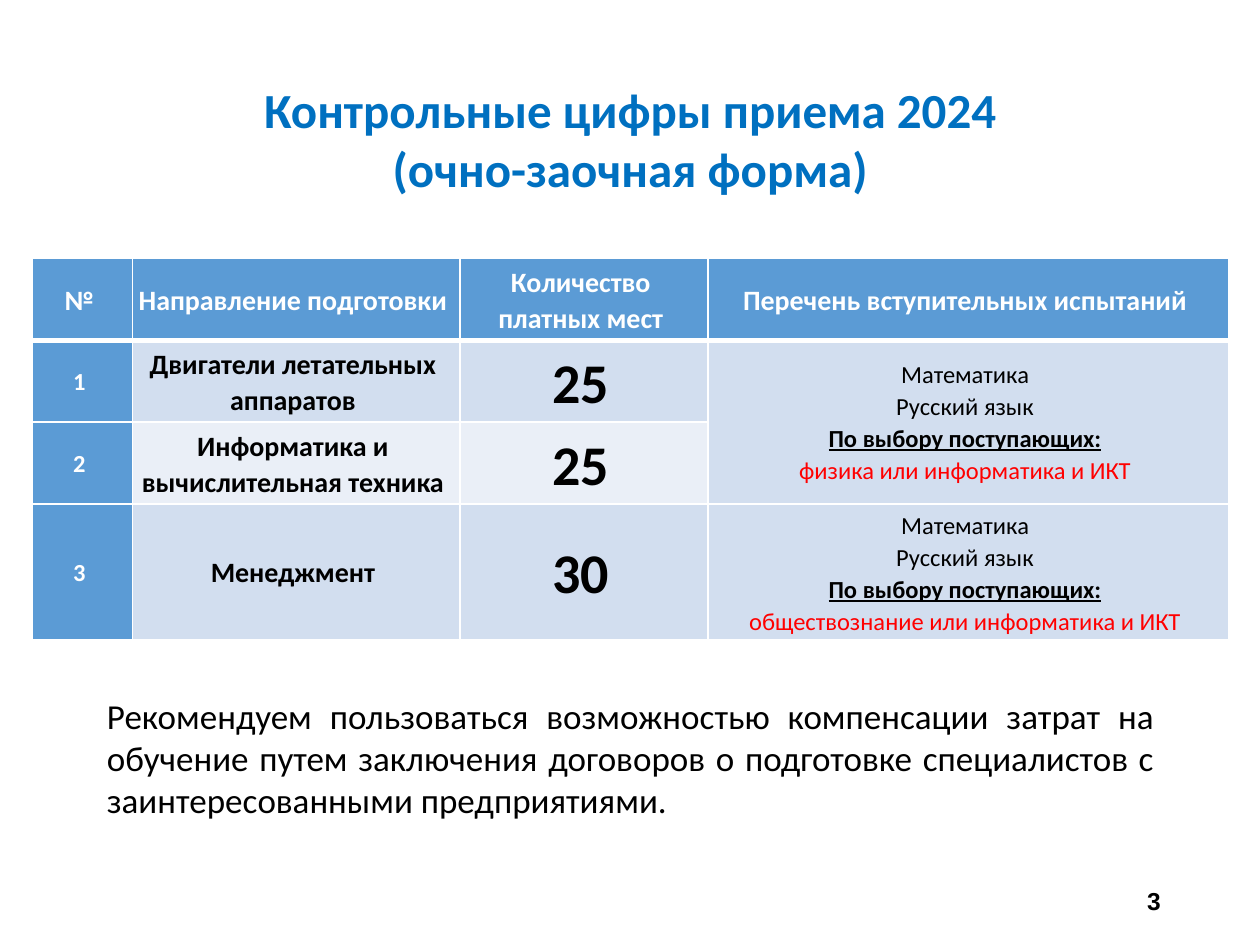
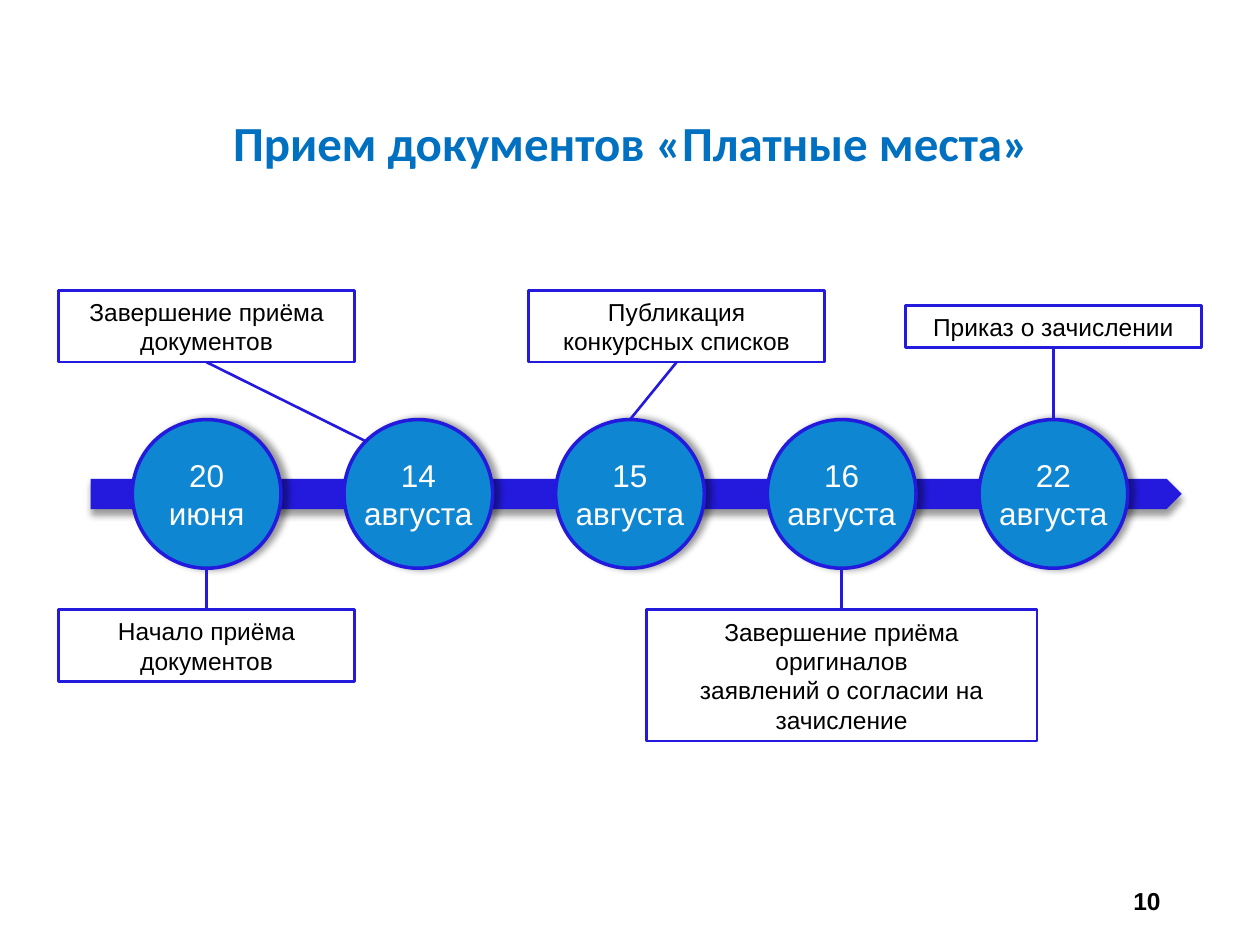
from typing import NamedTuple

from lxml.etree import SubElement
from pptx import Presentation
from pptx.dml.color import RGBColor
from pptx.enum.shapes import MSO_CONNECTOR, MSO_SHAPE
from pptx.enum.text import MSO_ANCHOR, PP_ALIGN
from pptx.oxml.ns import qn
from pptx.util import Inches, Pt

# ---- Content ----
QUOTA_TITLE = ["Контрольные цифры приема 2024", "(очно-заочная форма)"]
QUOTA_HEADER = ["№", "Направление подготовки", "Количество платных мест",
                "Перечень вступительных испытаний"]
PROGRAMMES = [
    ("Двигатели летательных аппаратов", "25"),
    ("Информатика и вычислительная техника", "25"),
    ("Менеджмент", "30"),
]
COMMON_EXAMS = ["Математика", "Русский язык", "По выбору поступающих:"]
# (first row, last row, subjects to choose from)
EXAM_CHOICES = [
    (1, 2, "физика или информатика и ИКТ"),
    (3, 3, "обществознание или информатика и ИКТ"),
]
ADVICE = ("Рекомендуем пользоваться возможностью компенсации затрат на обучение "
          "путем заключения договоров о подготовке специалистов "
          "с заинтересованными предприятиями.")

TIMELINE_TITLE = ["Прием документов «Платные места»"]
DATES = [("20", "июня"), ("14", "августа"), ("15", "августа"),
         ("16", "августа"), ("22", "августа")]
# One per date: (paragraphs, lines shown, above the band, shift from the date, width)
EVENTS = [
    (["Начало приёма документов"], 2, False, 0, 2.35),
    (["Завершение приёма документов"], 2, True, -1.68, 2.35),
    (["Публикация конкурсных списков"], 2, True, 0.37, 2.35),
    (["Завершение приёма оригиналов", "заявлений о согласии на зачисление"],
     4, False, 0, 3.1),
    (["Приказ о зачислении"], 1, True, 0, 2.35),
]


# ---- Theme ----
class Style(NamedTuple):
    size: int
    color: str = "000000"
    bold: bool = False
    underline: bool = False
    font: str = "Calibri"


class Theme:
    blue, pale, paler, white = "5B9BD5", "D2DEEF", "EAEFF7", "FFFFFF"
    outline, disc = "231ADD", "0E86D2"
    title = Style(28, "0070C0", True)
    header = Style(16, white, True)
    row_number = Style(14, white, True)
    programme = Style(16, bold=True)
    places = Style(32, bold=True)
    exam = Style(14)
    exam_lead = Style(14, bold=True, underline=True)
    exam_choice = Style(14, "FF0000")
    advice = Style(20)
    date = Style(18, white, font="Arial")
    event = Style(14, font="Arial")
    page = Style(14, bold=True, font="Arial")


# ---- Geometry, inches ----
SLIDE_W, SLIDE_H = 10, 7.5
TABLE_LEFT, TABLE_TOP = 0.26, 2.05
COLUMN_WIDTHS = [0.79, 2.6, 1.97, 4.13]
ROW_HEIGHTS = [0.65, 0.65, 0.65, 1.07]
DATE_STEP, DISC_SIZE, BAND_Y = 1.68, 1.18, 3.92
ABOVE_Y, BELOW_TOP = 2.59, 4.84
EVENT_PAD, EVENT_LINE = 0.1, 0.235


def rgb(color):
    return RGBColor.from_string(color)


def box(*lengths):
    return [Inches(length) for length in lengths]


def write(frame, lines, styles, align=PP_ALIGN.CENTER, spacing=None):
    """Fill a frame; styles is one Style for all lines or a list of them."""
    if isinstance(styles, Style):
        styles = [styles] * len(lines)
    frame.text = "\n".join(lines)
    for paragraph, style in zip(frame.paragraphs, styles):
        paragraph.alignment = align
        if spacing:
            paragraph.line_spacing = spacing
        for run in paragraph.runs:
            run.font.name, run.font.size = style.font, Pt(style.size)
            run.font.bold, run.font.underline = style.bold, style.underline
            run.font.color.rgb = rgb(style.color)


def add_text(slide, place, lines, style, align, anchor=MSO_ANCHOR.TOP):
    frame = slide.shapes.add_textbox(*box(*place)).text_frame
    frame.word_wrap = True
    frame.vertical_anchor = anchor
    write(frame, lines, style, align)


def new_slide(deck, title, title_place, page):
    slide = deck.slides.add_slide(deck.slide_layouts[5])
    heading = slide.shapes.title
    heading.left, heading.top, heading.width, heading.height = box(*title_place)
    write(heading.text_frame, title, Theme.title)
    add_text(slide, (7.06, 6.95, 2.25, 0.4), [page], Theme.page,
             PP_ALIGN.RIGHT, MSO_ANCHOR.MIDDLE)
    return slide


# ---- Quota table ----
def border(cell, side, width):
    line = SubElement(cell._tc.get_or_add_tcPr(), qn(f"a:ln{side}"), w=str(Pt(width)))
    fill = SubElement(line, qn("a:solidFill"))
    SubElement(fill, qn("a:srgbClr"), val=Theme.white)


def fill_cell(cell, row, column, lines, styles):
    for side in "LRTB":
        thick = (row == 0 and side == "B") or (row == 1 and side == "T")
        border(cell, side, 3 if thick else 1)
    cell.fill.solid()
    if row == 0 or column == 0:
        color = Theme.blue
    else:
        color = Theme.pale if row % 2 else Theme.paler
    cell.fill.fore_color.rgb = rgb(color)
    cell.margin_left, cell.margin_top, cell.margin_right, cell.margin_bottom = box(
        0.05, 0.04, 0.1, 0.04)
    cell.vertical_anchor = MSO_ANCHOR.MIDDLE
    write(cell.text_frame, lines, styles, spacing=1.07)


def add_quota_table(slide):
    table = slide.shapes.add_table(
        len(ROW_HEIGHTS), len(COLUMN_WIDTHS),
        *box(TABLE_LEFT, TABLE_TOP, sum(COLUMN_WIDTHS), sum(ROW_HEIGHTS))).table
    for column, width in zip(table.columns, COLUMN_WIDTHS):
        column.width = Inches(width)
    for row, height in zip(table.rows, ROW_HEIGHTS):
        row.height = Inches(height)

    for column, label in enumerate(QUOTA_HEADER):
        fill_cell(table.cell(0, column), 0, column, [label], Theme.header)
    row_styles = [Theme.row_number, Theme.programme, Theme.places]
    for row, programme in enumerate(PROGRAMMES, 1):
        for column, (value, style) in enumerate(zip((str(row), *programme), row_styles)):
            fill_cell(table.cell(row, column), row, column, [value], style)

    exam_column = len(COLUMN_WIDTHS) - 1
    exam_styles = [Theme.exam, Theme.exam, Theme.exam_lead, Theme.exam_choice]
    for first, last, choice in EXAM_CHOICES:
        exams = table.cell(first, exam_column)
        if last > first:
            exams.merge(table.cell(last, exam_column))
        fill_cell(exams, first, exam_column, COMMON_EXAMS + [choice], exam_styles)
        for paragraph in exams.text_frame.paragraphs:
            hanging = paragraph._p.get_or_add_pPr()
            hanging.set("marL", str(Inches(0.38)))
            hanging.set("indent", str(-Inches(0.38)))


# ---- Timeline ----
def add_figure(slide, kind, place, fill=None, line_width=None):
    figure = slide.shapes.add_shape(kind, *box(*place))
    figure.shadow.inherit = False
    if fill:
        figure.fill.solid()
        figure.fill.fore_color.rgb = rgb(fill)
    else:
        figure.fill.background()
    if line_width:
        figure.line.color.rgb = rgb(Theme.outline)
        figure.line.width = Pt(line_width)
    else:
        figure.line.fill.background()
    return figure


def cast_shadow(figure, direction):
    effects = figure._element.spPr.find(qn("a:effectLst"))
    shadow = SubElement(effects, qn("a:outerShdw"), blurRad=str(Pt(4)), dist=str(Pt(3)),
                        dir=str(direction * 60000), algn="ctr", rotWithShape="0")
    color = SubElement(shadow, qn("a:srgbClr"), val="000000")
    SubElement(color, qn("a:alpha"), val="40000")


def add_date(slide, center, date):
    disc = add_figure(slide, MSO_SHAPE.OVAL,
                      (center - DISC_SIZE / 2, BAND_Y - DISC_SIZE / 2, DISC_SIZE, DISC_SIZE),
                      Theme.disc, 2)
    cast_shadow(disc, 0)
    disc.text_frame.word_wrap = False
    write(disc.text_frame, date, Theme.date)


def add_event(slide, center, event):
    paragraphs, lines, above, shift, width = event
    height = EVENT_PAD + EVENT_LINE * lines
    top = ABOVE_Y - height / 2 if above else BELOW_TOP
    label = add_figure(slide, MSO_SHAPE.RECTANGLE,
                       (center + shift - width / 2, top, width, height), line_width=1.5)
    label.text_frame.word_wrap = True
    write(label.text_frame, paragraphs, Theme.event)

    # A far label meets its disc on the upper-left diagonal
    radius = DISC_SIZE / 2
    if shift <= -DATE_STEP:
        start = (center - radius * 0.71, BAND_Y - radius * 0.71)
    else:
        start = (center, BAND_Y - radius if above else BAND_Y + radius)
    link = slide.shapes.add_connector(MSO_CONNECTOR.STRAIGHT, *box(*start, *start))
    link.end_connect(label, 2 if above else 0)
    link.line.color.rgb = rgb(Theme.outline)
    link.line.width = Pt(1.5)
    SubElement(link._element.spPr, qn("a:effectLst"))


def add_timeline(slide):
    band = add_figure(slide, MSO_SHAPE.PENTAGON, (0.72, BAND_Y - 0.12, 8.66, 0.24),
                      Theme.outline)
    cast_shadow(band, 90)
    first = SLIDE_W / 2 - DATE_STEP * (len(DATES) - 1) / 2
    for index, (date, event) in enumerate(zip(DATES, EVENTS)):
        center = first + DATE_STEP * index
        add_date(slide, center, date)
        add_event(slide, center, event)


def main():
    deck = Presentation()
    deck.slide_width, deck.slide_height = box(SLIDE_W, SLIDE_H)

    quotas = new_slide(deck, QUOTA_TITLE, (0, 0.58, SLIDE_W, 1.04), "3")
    add_quota_table(quotas)
    add_text(quotas, (0.75, 5.46, 8.51, 1.11), [ADVICE], Theme.advice, PP_ALIGN.JUSTIFY)

    timeline = new_slide(deck, TIMELINE_TITLE, (1.71, 0.84, 6.59, 0.57), "10")
    add_timeline(timeline)
    deck.save("out.pptx")


if __name__ == "__main__":
    main()
